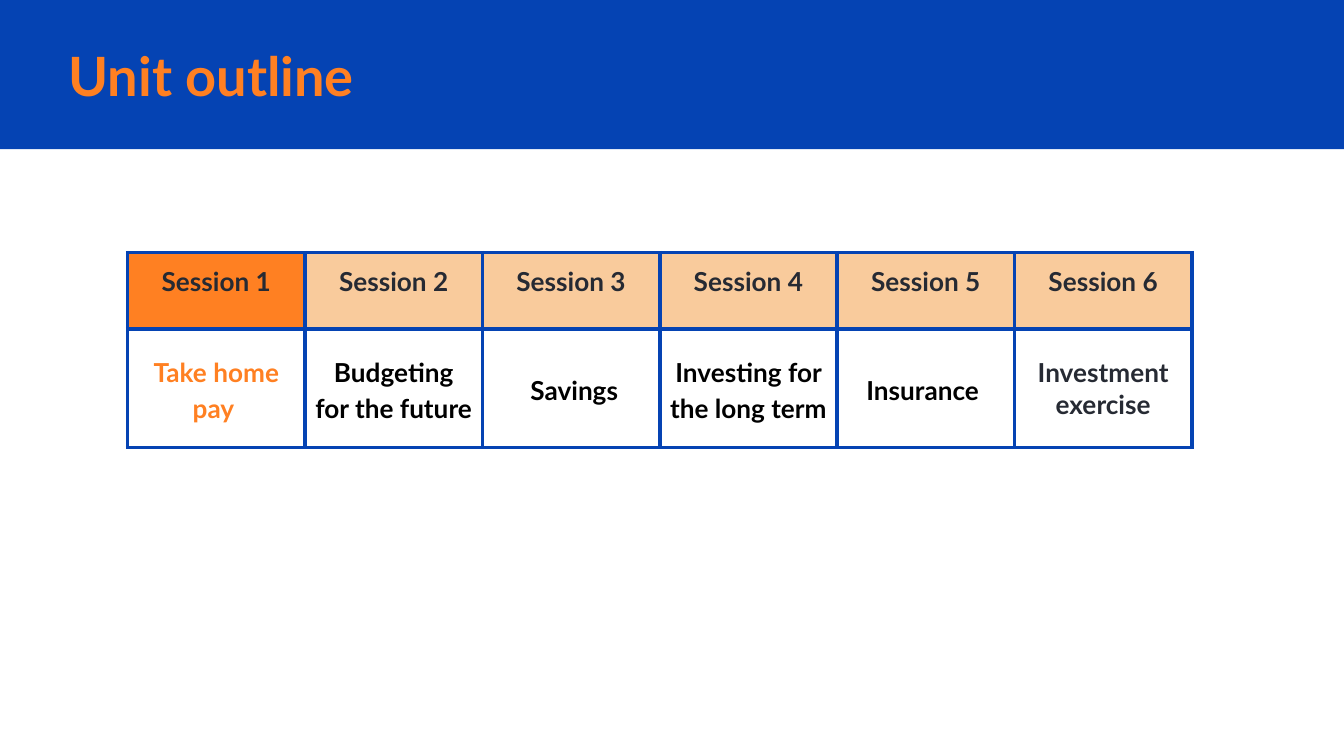
from dataclasses import dataclass

import pptx
import pptx.dml.color
import pptx.enum.shapes
import pptx.enum.text
import pptx.oxml
import pptx.oxml.ns
import pptx.util

Inches = pptx.util.Inches
Pt = pptx.util.Pt
RGBColor = pptx.dml.color.RGBColor
MSO_ANCHOR = pptx.enum.text.MSO_ANCHOR
PP_ALIGN = pptx.enum.text.PP_ALIGN

BLUE = RGBColor(0x05, 0x43, 0xB3)
ORANGE = RGBColor(0xFF, 0x80, 0x22)
PEACH = RGBColor(0xF9, 0xCB, 0x9C)
DARK = RGBColor(0x26, 0x2A, 0x33)
BLACK = RGBColor(0, 0, 0)
WHITE = RGBColor(0xFF, 0xFF, 0xFF)

FONT = "Lato"
SLIDE_WIDTH = Inches(10)
SLIDE_HEIGHT = SLIDE_WIDTH * 9 // 16
COL_WIDTH = 1.32
ROW_HEIGHTS = (0.57, 0.88)
BORDER_WIDTH = 2.25


@dataclass
class Session:
    topic: str
    header_fill: RGBColor = PEACH
    topic_color: RGBColor = BLACK
    line_spacing: float = 1.15
    margin: float = 0.07


SESSIONS = [
    Session("Take home pay ", header_fill=ORANGE, topic_color=ORANGE),
    Session("Budgeting for the future"),
    Session(" Savings"),
    Session("Investing for the long term"),
    Session("Insurance "),
    Session("Investment exercise", topic_color=DARK, line_spacing=1.0, margin=0.1),
]


def set_margins(box, margin: float) -> None:
    """Give a cell or text frame the same margin, in inches, on every side."""
    for side in ("left", "right", "top", "bottom"):
        setattr(box, f"margin_{side}", Inches(margin))


def style_paragraph(p, size: float, color: RGBColor, align) -> None:
    p.alignment = align
    p.font.name = FONT
    p.font.size = Pt(size)
    p.font.bold = True
    p.font.color.rgb = color


def add_borders(cell) -> None:
    tc_pr = cell._tc.get_or_add_tcPr()
    for index, side in enumerate(("lnL", "lnR", "lnT", "lnB")):
        line = pptx.oxml.parse_xml(
            f'<a:{side} {pptx.oxml.ns.nsdecls("a")} w="{Pt(BORDER_WIDTH)}">'
            f'<a:solidFill><a:srgbClr val="{BLUE}"/></a:solidFill></a:{side}>'
        )
        tc_pr.insert(index, line)


def fill_cell(cell, text: str, fill: RGBColor, color: RGBColor, anchor,
              margin: float = 0.1, line_spacing: float = 1.0) -> None:
    cell.fill.solid()
    cell.fill.fore_color.rgb = fill
    cell.vertical_anchor = anchor
    set_margins(cell, margin)
    cell.text = text
    p = cell.text_frame.paragraphs[0]
    p.line_spacing = line_spacing
    style_paragraph(p, 14, color, PP_ALIGN.CENTER)
    add_borders(cell)


def add_title(s, text: str) -> None:
    """Format the title placeholder and put the blue band behind it."""
    title = s.shapes.title
    title.left, title.top = Inches(0.41), Inches(0.28)
    title.width, title.height = Inches(8.46), Inches(0.56)
    tf = title.text_frame
    tf.text = text
    tf.word_wrap = True
    tf.auto_size = pptx.enum.text.MSO_AUTO_SIZE.NONE
    tf.vertical_anchor = MSO_ANCHOR.MIDDLE
    set_margins(tf, 0.1)
    style_paragraph(tf.paragraphs[0], 29, ORANGE, PP_ALIGN.LEFT)

    band = s.shapes.add_shape(
        pptx.enum.shapes.MSO_SHAPE.RECTANGLE, 0, 0, SLIDE_WIDTH, Inches(1.11))
    band.shadow.inherit = False
    band.fill.solid()
    band.fill.fore_color.rgb = BLUE
    band.line.fill.background()
    title.element.addprevious(band.element)


def add_outline(s, sessions: list[Session]) -> None:
    table = s.shapes.add_table(
        len(ROW_HEIGHTS), len(sessions), Inches(0.95), Inches(1.88),
        Inches(COL_WIDTH * len(sessions)), Inches(sum(ROW_HEIGHTS))).table
    for row, height in zip(table.rows, ROW_HEIGHTS):
        row.height = Inches(height)
    for col, session in enumerate(sessions):
        table.columns[col].width = Inches(COL_WIDTH)
        fill_cell(table.cell(0, col), f"Session {col + 1}", session.header_fill,
                  DARK, MSO_ANCHOR.TOP)
        fill_cell(table.cell(1, col), session.topic, WHITE, session.topic_color,
                  MSO_ANCHOR.MIDDLE, session.margin, session.line_spacing)


def main() -> None:
    prs = pptx.Presentation()
    prs.slide_width, prs.slide_height = SLIDE_WIDTH, SLIDE_HEIGHT
    s = prs.slides.add_slide(prs.slide_layouts.get_by_name("Title Only"))
    add_title(s, "Unit outline")
    add_outline(s, SESSIONS)
    prs.save("out.pptx")


if __name__ == "__main__":
    main()
